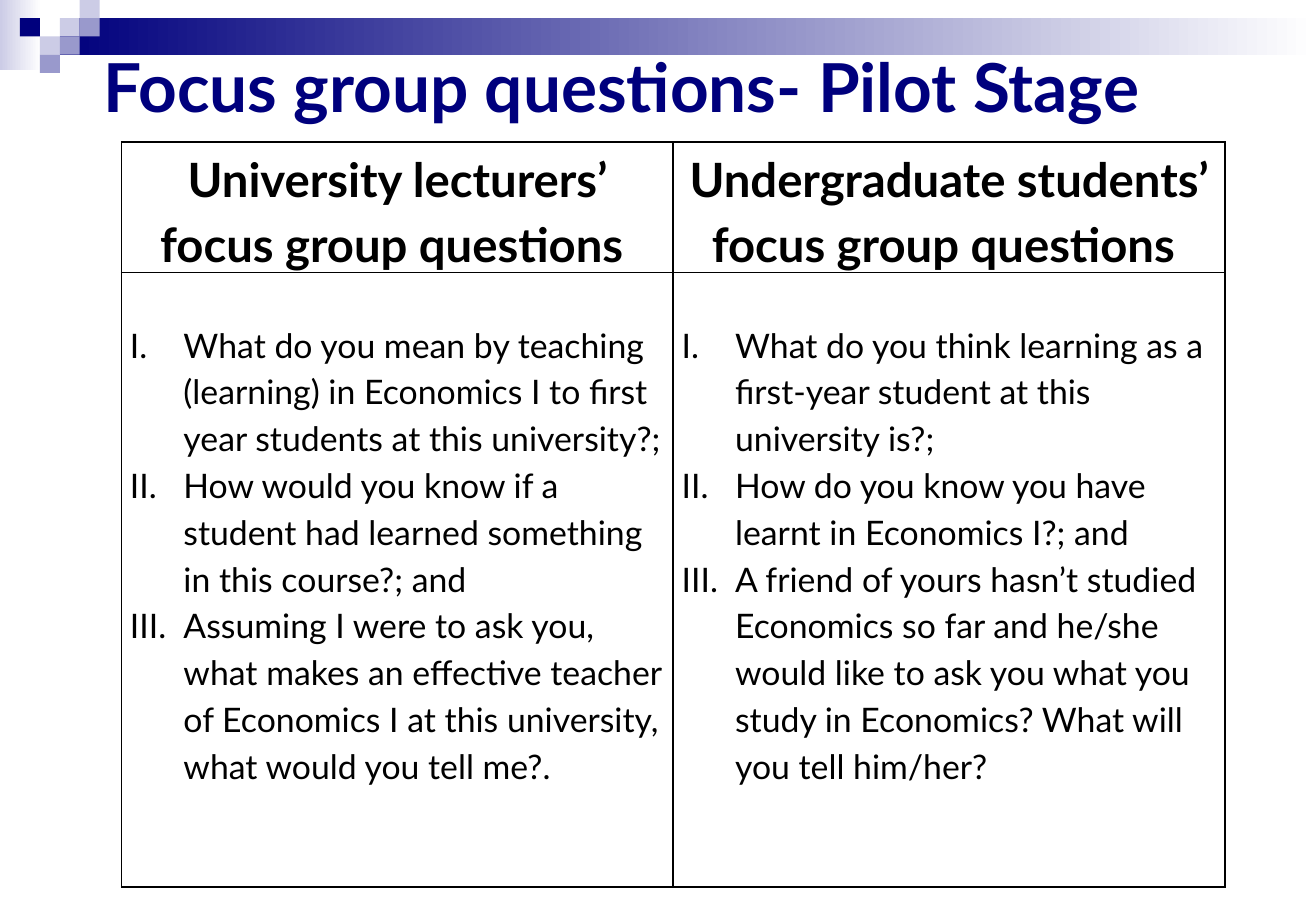
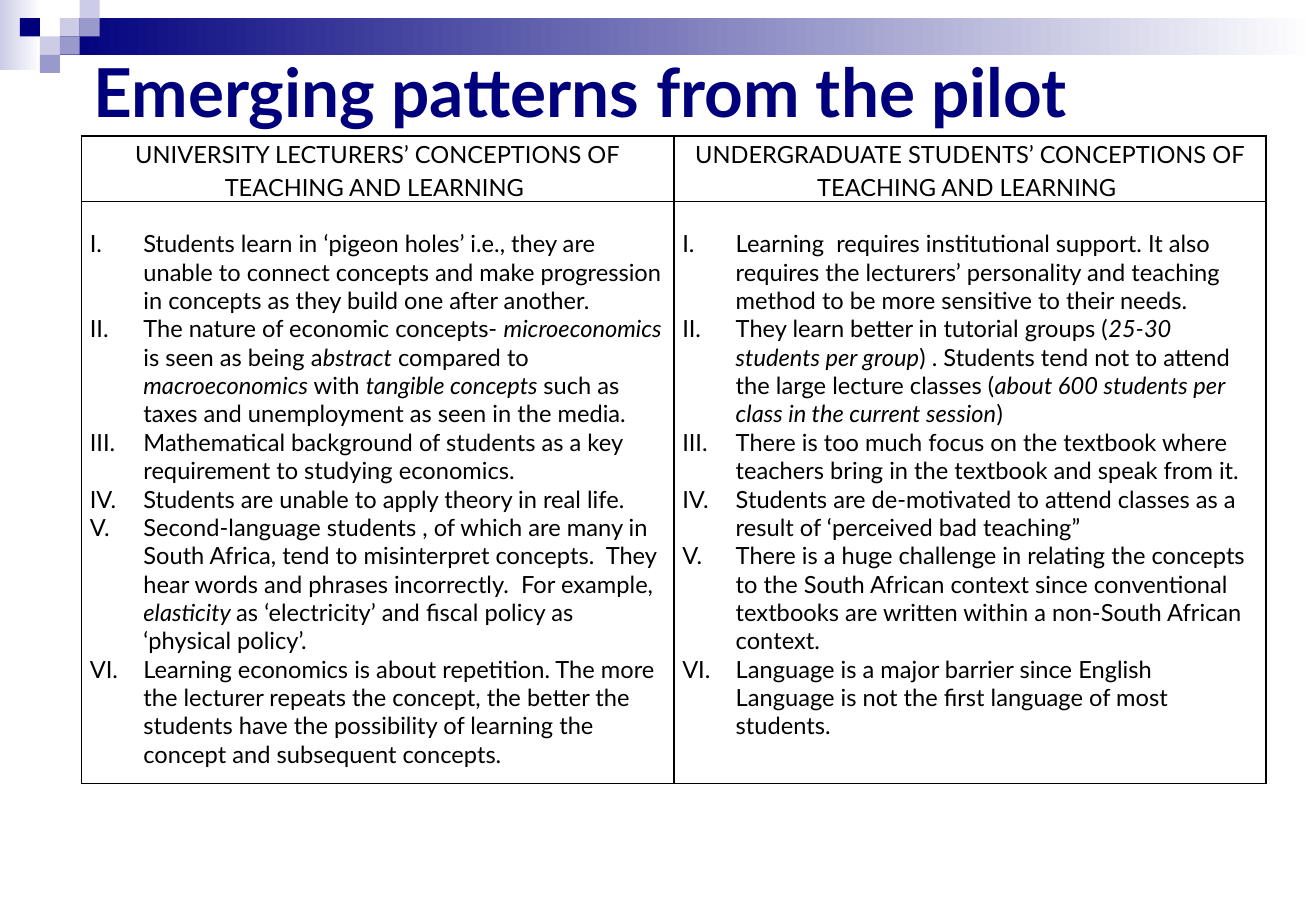
import lxml.etree
import pptx
import pptx.dml.color
import pptx.enum.shapes
import pptx.enum.text
import pptx.oxml.ns
import pptx.util

Inches = pptx.util.Inches
ALIGN = pptx.enum.text.PP_ALIGN

COLORS = {
    "navy": "00007D",
    "violet": "9999CC",
    "lavender": "CCCCE6",
    "white": "FFFFFF",
    "black": "000000",
}
FONT = "Lato"
SLIDE_WIDTH, SLIDE_HEIGHT = 10.83, 7.5

# The corner mosaic is a grid of small squares: (column, row, colour)
MOSAIC_COLUMN, MOSAIC_ROW = 0.82 / 5, 0.15
MOSAIC = [
    (3, 1, "lavender"),
    (4, 0, "lavender"),
    (4, 1, "violet"),
    (2, 2, "lavender"),
    (1, 1, "navy"),
    (3, 2, "violet"),
    (2, 3, "violet"),
]

PILOT_HEADINGS = [
    "University lecturers’ focus group questions ",
    "Undergraduate students’ focus group questions ",
]
PILOT_QUESTIONS = [
    [
        "What do you mean by teaching (learning) in Economics I to first year students at this university?;",
        "How would you know if a student had learned something in this course?; and",
        "Assuming I were to ask you, what makes an effective teacher of Economics I at this university, "
        "what would you tell me?.",
    ],
    [
        "What do you think learning as a first-year student at this university is?;",
        "How do you know you have learnt in Economics I?; and",
        "A friend of yours hasn’t studied Economics so far and he/she would like to ask you what you study "
        "in Economics? What will you tell him/her?",
    ],
]

PATTERN_HEADINGS = [
    "UNIVERSITY LECTURERS’ CONCEPTIONS OF TEACHING AND LEARNING ",
    "UNDERGRADUATE STUDENTS’ CONCEPTIONS OF TEACHING AND LEARNING ",
]
PATTERNS = [
    [
        "Students learn in ‘pigeon holes’ i.e., they are unable to connect concepts and make progression "
        "in concepts as they build one after another.",
        "The nature of economic concepts- *microeconomics* is seen as being a*bstract* compared to "
        "*macroeconomics* with *tangible concepts *such as taxes and unemployment as seen in the media.",
        "Mathematical background of students as a key requirement to studying economics.",
        "Students are unable to apply theory in real life.",
        "Second-language students , of which are many in South Africa, tend to misinterpret concepts.  "
        "They hear words and phrases incorrectly.  For example, *elasticity *as ‘electricity’ and fiscal "
        "policy as ‘physical policy’.",
        "Learning economics is about repetition. The more the lecturer repeats the concept, the better the "
        "students have the possibility of learning the concept and subsequent concepts.",
    ],
    [
        "Learning  requires institutional support. It also requires the lecturers’ personality and teaching "
        "method to be more sensitive to their needs.",
        "They learn better in tutorial groups (*25-30 students per group*) . Students tend not to attend "
        "the large lecture classes (*about 600 students per class in the current session*)",
        "There is too much focus on the textbook where teachers bring in the textbook and speak from it.",
        "Students are de-motivated to attend classes as a result of ‘perceived bad teaching”",
        "There is a huge challenge in relating the concepts to the South African context since conventional "
        "textbooks are written within a non-South African context.",
        "Language is a major barrier since English Language is not the first language of most students.",
    ],
]


def rgb(name):
    return pptx.dml.color.RGBColor.from_string(COLORS[name])


def add_xml(parent, tag, **attributes):
    child = lxml.etree.SubElement(parent, pptx.oxml.ns.qn(tag))
    for key, value in attributes.items():
        child.set(key, str(value))
    return child


def write_text(frame, paragraphs, size, bold=False, color="black", align=ALIGN.LEFT, spacing=1.0, numbered=False):
    """Fill a text frame; parts between asterisks are italic."""
    for index, text in enumerate(paragraphs):
        paragraph = frame.add_paragraph() if index else frame.paragraphs[0]
        paragraph.alignment = align
        paragraph.line_spacing = spacing
        if numbered:
            properties = paragraph._p.get_or_add_pPr()
            properties.set("marL", str(Inches(0.44)))
            properties.set("indent", str(Inches(-0.44)))
            add_xml(properties, "a:buAutoNum", type="romanUcPeriod")
        for position, part in enumerate(text.split("*")):
            if not part:
                continue
            run = paragraph.add_run()
            run.text = part
            run.font.name = FONT
            run.font.size = pptx.util.Pt(size)
            run.font.bold = bold
            run.font.italic = position % 2 == 1
            run.font.color.rgb = rgb(color)


def add_block(slide, left, top, width, height, color, fade=False):
    """Add a borderless rectangle, plain or fading to white on the right."""
    block = slide.shapes.add_shape(
        pptx.enum.shapes.MSO_SHAPE.RECTANGLE, Inches(left), Inches(top), Inches(width), Inches(height)
    )
    block.shadow.inherit = False
    block.line.fill.background()
    if fade:
        block.fill.gradient()
        block.fill.gradient_angle = 0
        for stop, name in zip(block.fill.gradient_stops, (color, "white")):
            stop.color.rgb = rgb(name)
    else:
        block.fill.solid()
        block.fill.fore_color.rgb = rgb(color)
    return block


def decorate_master(master, slide):
    """Draw the band and mosaic on a slide, then move them behind the master's placeholders."""
    band_left = 3 * MOSAIC_COLUMN
    blocks = [
        add_block(slide, 0, 0, 0.34, 0.58, "lavender", fade=True),
        add_block(slide, band_left, MOSAIC_ROW, SLIDE_WIDTH - band_left, 2 * MOSAIC_ROW, "navy", fade=True),
    ]
    for column, row, color in MOSAIC:
        blocks.append(
            add_block(slide, column * MOSAIC_COLUMN, row * MOSAIC_ROW, MOSAIC_COLUMN, MOSAIC_ROW, color)
        )
    for index, block in enumerate(blocks):
        block.element.nvSpPr.cNvPr.set("id", str(100 + index))
        master.shapes.element.insert(2 + index, block.element)


def place_title(slide, text, left, top, width, height):
    title = slide.shapes.title
    title.left, title.top, title.width, title.height = map(Inches, (left, top, width, height))
    frame = title.text_frame
    frame.word_wrap = True
    frame.auto_size = pptx.enum.text.MSO_AUTO_SIZE.NONE
    frame.vertical_anchor = pptx.enum.text.MSO_ANCHOR.MIDDLE
    write_text(frame, [text], 40, bold=True, color="navy")


def style_cell(cell, top_margin=0):
    cell.margin_left = cell.margin_right = Inches(0.07)
    cell.margin_top, cell.margin_bottom = Inches(top_margin), 0
    properties = cell._tc.get_or_add_tcPr()
    for side in ("a:lnL", "a:lnR", "a:lnT", "a:lnB"):
        border = add_xml(properties, side, w=pptx.util.Pt(1))
        add_xml(add_xml(border, "a:solidFill"), "a:srgbClr", val=COLORS["black"])
    cell.fill.background()


def add_comparison(slide, left, top, width, row_heights, headings, lists, heading_format, list_format, list_gap):
    """Add a table with one heading and one numbered list per column."""
    table = slide.shapes.add_table(
        2, len(headings), Inches(left), Inches(top), Inches(width), Inches(sum(row_heights))
    ).table
    table.first_row = table.horz_banding = False
    for row, height in zip(table.rows, row_heights):
        row.height = Inches(height)
    for column, (heading, items) in enumerate(zip(headings, lists)):
        heading_cell, list_cell = table.cell(0, column), table.cell(1, column)
        style_cell(heading_cell)
        style_cell(list_cell, list_gap)
        write_text(heading_cell.text_frame, [heading], align=ALIGN.CENTER, spacing=1.15, **heading_format)
        write_text(list_cell.text_frame, items, numbered=True, **list_format)


def main():
    deck = pptx.Presentation()
    deck.slide_width, deck.slide_height = Inches(SLIDE_WIDTH), Inches(SLIDE_HEIGHT)
    title_only = deck.slide_layouts[5]

    pilot = deck.slides.add_slide(title_only)
    decorate_master(deck.slide_master, pilot)
    place_title(pilot, "Focus group questions- Pilot Stage", 0.75, 0.33, 9.75, 0.75)
    add_comparison(
        pilot, 1, 1.17, 9.08, (1.07, 5.06), PILOT_HEADINGS, PILOT_QUESTIONS,
        heading_format={"size": 28, "bold": True},
        list_format={"size": 20, "spacing": 1.15},
        list_gap=0.38,
    )

    patterns = deck.slides.add_slide(title_only)
    place_title(patterns, "Emerging patterns from the pilot", 0.67, 0.58, 9.75, 0.33)
    add_comparison(
        patterns, 0.67, 1.12, 9.75, (0.54, 4.79), PATTERN_HEADINGS, PATTERNS,
        heading_format={"size": 14},
        list_format={"size": 14},
        list_gap=0.23,
    )
    deck.save("out.pptx")


if __name__ == "__main__":
    main()
